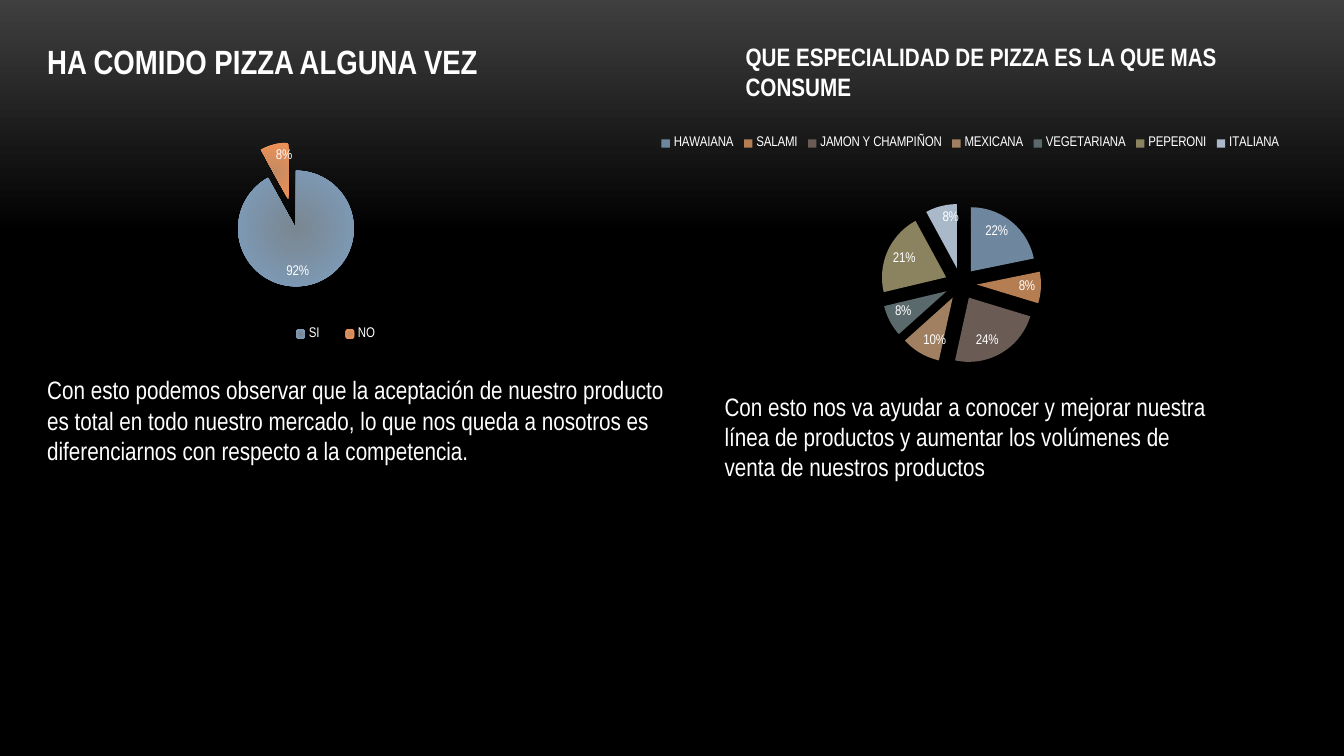
from dataclasses import dataclass

from pptx import Presentation
from pptx.chart.data import CategoryChartData
from pptx.dml.color import RGBColor
from pptx.enum.chart import XL_CHART_TYPE, XL_LABEL_POSITION, XL_LEGEND_POSITION
from pptx.enum.text import MSO_AUTO_SIZE
from pptx.oxml import parse_xml
from pptx.oxml.ns import nsdecls, qn
from pptx.util import Cm, Pt

PIE = XL_CHART_TYPE.PIE_EXPLODED
LEGEND_TOP = XL_LEGEND_POSITION.TOP
INSIDE_END = XL_LABEL_POSITION.INSIDE_END
FIT_TEXT = MSO_AUTO_SIZE.SHAPE_TO_FIT_TEXT


@dataclass(frozen=True)
class Theme:
    font: str = "Arial Narrow"
    text: str = "FFFFFF"
    background: tuple = (("3F3F3F", 0), ("000000", 0.31))
    heading_size: int = 24
    body_size: int = 18
    chart_size: int = 10
    explosion: int = 25
    # Each slice has a centre colour and an edge colour
    glowing: tuple = (("7A8791", "7E9FC0"), ("C58B62", "F19156"))
    flat: tuple = ("6F879E", "B57D52", "6A5C54", "A08060", "5A6A6C", "8B8260", "A9B9C9")


THEME = Theme()


def paint_background(slide):
    fill = slide.background.fill
    fill.gradient()
    fill.gradient_angle = 270
    for stop, (color, position) in zip(fill.gradient_stops, THEME.background):
        stop.color.rgb = RGBColor.from_string(color)
        stop.position = position


def add_text(slide, box, text, size, bold=False, wrap=True):
    frame = slide.shapes.add_textbox(*map(Cm, box)).text_frame
    frame.word_wrap = wrap
    frame.auto_size = FIT_TEXT
    frame.text = text
    font = frame.paragraphs[0].runs[0].font
    font.name, font.size, font.bold = THEME.font, Pt(size), bold
    font.color.rgb = RGBColor.from_string(THEME.text)


def place(element, index, area, target=""):
    """Fix a chart part at fractions of the chart: x, y, width, height."""
    for old in element.findall(qn("c:layout")):
        element.remove(old)
    x, y, w, h = area
    element.insert(index, parse_xml(
        f'<c:layout {nsdecls("c")}><c:manualLayout>{target}'
        '<c:xMode val="edge"/><c:yMode val="edge"/>'
        f'<c:x val="{x}"/><c:y val="{y}"/><c:w val="{w}"/><c:h val="{h}"/>'
        '</c:manualLayout></c:layout>'))


def paint_slice(fill, color):
    if isinstance(color, str):
        fill.solid()
        fill.fore_color.rgb = RGBColor.from_string(color)
        return
    fill.gradient()
    for stop, shade in zip(fill.gradient_stops, color):
        stop.color.rgb = RGBColor.from_string(shade)


def add_pie(slide, box, answers, colors, plot_area, legend_area):
    data = CategoryChartData()
    data.categories = list(answers)
    data.add_series("Series 1", list(answers.values()))
    chart = slide.shapes.add_chart(PIE, *map(Cm, box), data).chart
    chart.has_title = False
    chart.font.name, chart.font.size = THEME.font, Pt(THEME.chart_size)
    chart.font.color.rgb = RGBColor.from_string(THEME.text)

    # Legend and plot area
    chart.has_legend = True
    legend = chart.legend
    legend.position = LEGEND_TOP
    legend.include_in_layout = False
    place(legend._element, 1, legend_area)
    plot_xml = chart._chartSpace.chart.plotArea
    place(plot_xml, 0, plot_area, '<c:layoutTarget val="inner"/>')

    # Percentages
    plot = chart.plots[0]
    plot.vary_by_categories = True
    plot.has_data_labels = True
    labels = plot.data_labels
    labels.show_percentage, labels.show_value = True, False
    labels.number_format, labels.number_format_is_linked = "0%", False
    labels.position = INSIDE_END

    # Slices
    slices = plot.series[0]
    for index, color in enumerate(colors):
        look = slices.points[index].format
        paint_slice(look.fill, color)
        look.line.fill.background()
    series_xml = slices._element
    for old in series_xml.findall(qn("c:explosion")):
        series_xml.remove(old)
    series_xml.find(qn("c:dPt")).addprevious(
        parse_xml(f'<c:explosion {nsdecls("c")} val="{THEME.explosion}"/>'))
    for gradient in series_xml.iter(qn("a:gradFill")):
        for linear in gradient.findall(qn("a:lin")):
            gradient.replace(linear, parse_xml(
                f'<a:path {nsdecls("a")} path="circle">'
                '<a:fillToRect l="50000" t="50000" r="50000" b="50000"/></a:path>'))


def add_acceptance(slide, left, top):
    add_text(slide, (left, top, 13.87, 1.27), "HA COMIDO PIZZA ALGUNA VEZ",
             THEME.heading_size, bold=True, wrap=False)
    add_pie(slide, (left + 0.1, top + 2.21, 14.55, 5.79), {"SI ": 92, "NO": 8},
            THEME.glowing, (0.26, 0.08, 0.35, 0.63), (0.41, 0.86, 0.2, 0.11))
    add_text(slide, (left, top + 8.41, 16.26, 4.11),
             "Con esto podemos observar que la aceptación de nuestro producto es total "
             "en todo nuestro mercado, lo que nos queda a nosotros es diferenciarnos "
             "con respecto a la competencia.", THEME.body_size)


def add_specialities(slide, left, top):
    add_text(slide, (left + 2.18, top, 14.66, 2.57),
             "QUE ESPECIALIDAD DE PIZZA ES LA QUE MAS CONSUME",
             THEME.body_size, bold=True)
    answers = {"HAWAIANA": 22, "SALAMI": 8, "JAMON Y CHAMPIÑON": 24, "MEXICANA": 10,
               "VEGETARIANA": 8, "PEPERONI": 21, "ITALIANA": 8}
    add_pie(slide, (left, top + 2.01, 16.03, 6.32), answers, THEME.flat,
            (0.33, 0.35, 0.32, 0.64), (0.01, 0.06, 0.99, 0.1))
    add_text(slide, (left + 1.65, top + 8.82, 13.06, 2.57),
             "Con esto nos va ayudar a conocer y mejorar nuestra línea de productos y "
             "aumentar los volúmenes de venta de nuestros productos", THEME.body_size)


def main():
    deck = Presentation()
    deck.slide_width, deck.slide_height = Cm(33.87), Cm(19.05)
    slide = deck.slides.add_slide(deck.slide_layouts[6])
    paint_background(slide)
    add_acceptance(slide, 0.94, 0.91)
    add_specialities(slide, 16.36, 0.91)
    deck.save("out.pptx")


if __name__ == "__main__":
    main()
